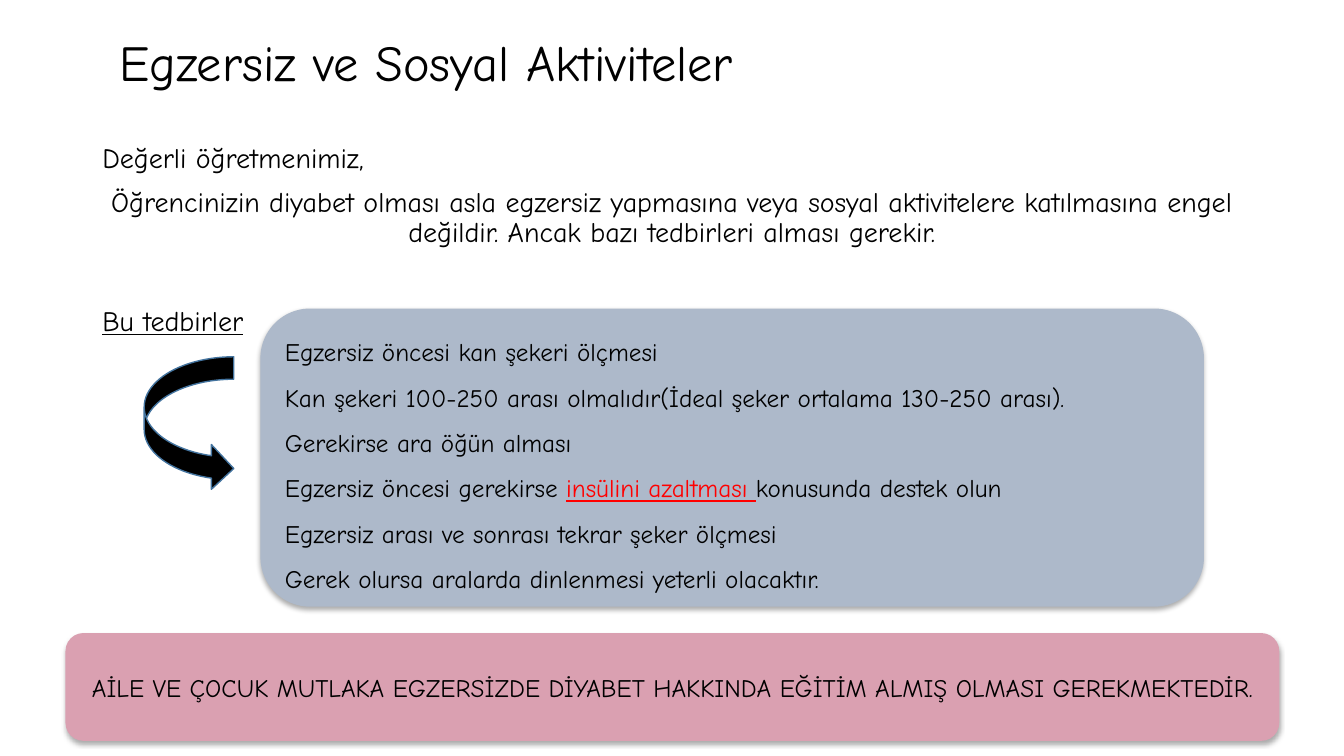
from dataclasses import dataclass
from lxml.etree import SubElement
from pptx import Presentation
from pptx.dml.color import RGBColor
from pptx.enum.shapes import MSO_SHAPE
from pptx.enum.text import MSO_ANCHOR, PP_ALIGN
from pptx.oxml.ns import qn
from pptx.util import Pt


@dataclass(frozen=True)
class Theme:
    font: str = "Comic Neue"
    ink: str = "000000"
    alert: str = "FF0000"
    steps: str = "ADB9CA"
    banner: str = "DAA0B1"
    edge: str = "43739E"
    title: int = 36
    body: int = 20
    small: int = 18


theme = Theme()


def write(frame, text, size=theme.small, align=PP_ALIGN.LEFT, space=1.0,
          before=0, under=False, mark=None):
    """Add a paragraph; the part equal to mark is red and underlined."""
    para = frame.paragraphs[0]
    if para.runs:
        para = frame.add_paragraph()
    para.alignment = align
    para.line_spacing = space
    para.space_before = Pt(before)
    head, hit, tail = text.partition(mark) if mark else (text, "", "")
    for part, color, line in ((head, theme.ink, under),
                              (hit, theme.alert, True),
                              (tail, theme.ink, under)):
        if part:
            run = para.add_run()
            run.text = part
            run.font.name = theme.font
            run.font.size = Pt(size)
            run.font.underline = line
            run.font.color.rgb = RGBColor.from_string(color)


def panel(left, top, width, height, fill):
    """Add a rounded panel with a soft shadow and return its text frame."""
    box = slide.shapes.add_shape(MSO_SHAPE.ROUNDED_RECTANGLE, Pt(left),
                                 Pt(top), Pt(width), Pt(height))
    box.fill.solid()
    box.fill.fore_color.rgb = RGBColor.from_string(fill)
    box.line.fill.background()
    box.shadow.inherit = False
    effects = box._element.spPr.find(qn("a:effectLst"))
    shade = SubElement(effects, qn("a:outerShdw"), blurRad=str(Pt(3.5)),
                       dist=str(Pt(2.2)), dir="5400000", rotWithShape="0")
    tint = SubElement(shade, qn("a:srgbClr"), val=theme.ink)
    SubElement(tint, qn("a:alpha"), val="32000")
    frame = box.text_frame
    frame.word_wrap = True
    frame.vertical_anchor = MSO_ANCHOR.MIDDLE
    return frame


deck = Presentation()
deck.slide_width, deck.slide_height = Pt(960), Pt(540)
slide = deck.slides.add_slide(deck.slide_layouts[6])

# Title
title = slide.shapes.add_textbox(Pt(78), Pt(29), Pt(816), Pt(35)).text_frame
title.word_wrap = True
title.vertical_anchor = MSO_ANCHOR.MIDDLE
write(title, "Egzersiz ve Sosyal Aktiviteler", size=theme.title, space=0.9)

# Letter to the teacher
letter = slide.shapes.add_textbox(Pt(66), Pt(99.4), Pt(828), Pt(150)).text_frame
letter.word_wrap = True
write(letter, "Değerli öğretmenimiz,", size=theme.body, space=0.9)
write(letter, "Öğrencinizin diyabet olması asla egzersiz yapmasına veya sosyal "
      "aktivitelere katılmasına engel değildir. Ancak bazı tedbirleri alması "
      "gerekir.", size=theme.body, align=PP_ALIGN.CENTER, space=0.9, before=10)
write(letter, "Bu tedbirler", size=theme.body, space=0.9, before=41.5,
      under=True)

# Precautions
steps = panel(186, 220.4, 674, 213, theme.steps)
for step in (
    "Egzersiz öncesi kan şekeri ölçmesi",
    "Kan şekeri 100-250 arası olmalıdır(İdeal şeker ortalama 130-250 arası).",
    "Gerekirse ara öğün alması",
    "Egzersiz öncesi gerekirse insülini azaltması konusunda destek olun",
    "Egzersiz arası ve sonrası tekrar şeker ölçmesi",
    "Gerek olursa aralarda dinlenmesi yeterli olacaktır.",
):
    write(steps, step, space=1.5, mark="insülini azaltması ")

# Closing banner
banner = panel(46.8, 452.2, 867, 77, theme.banner)
write(banner, "AİLE VE ÇOCUK MUTLAKA EGZERSİZDE DİYABET HAKKINDA EĞİTİM ALMIŞ "
      "OLMASI GEREKMEKTEDİR.", align=PP_ALIGN.CENTER)

# Arrow to the precautions
arrow = slide.shapes.add_shape(MSO_SHAPE.CURVED_RIGHT_ARROW, Pt(103),
                               Pt(254.9), Pt(64), Pt(95.8))
arrow.shadow.inherit = False
arrow.fill.solid()
arrow.fill.fore_color.rgb = RGBColor.from_string(theme.ink)
arrow.line.color.rgb = RGBColor.from_string(theme.edge)
arrow.line.width = Pt(1)

deck.save("out.pptx")
